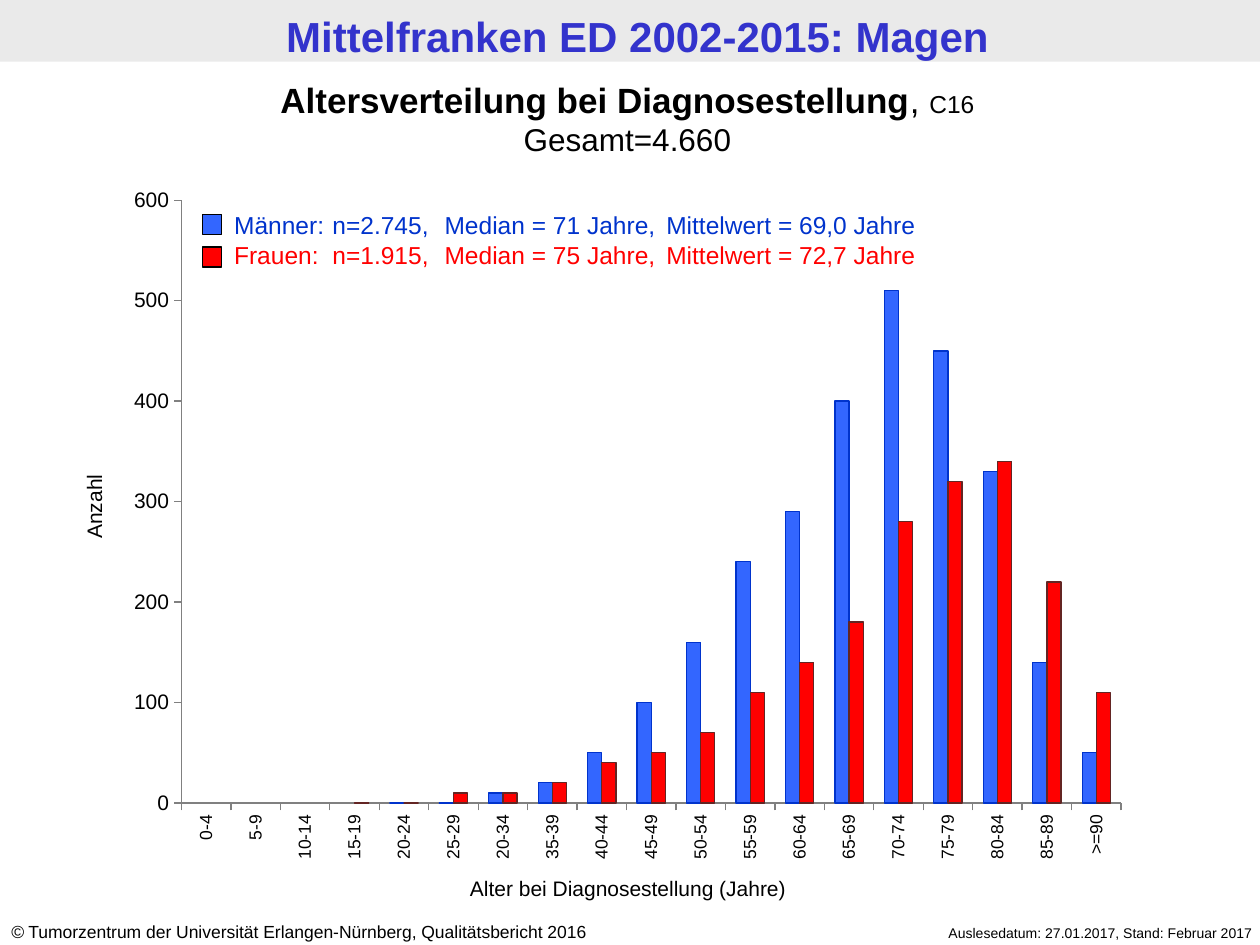
from pptx import Presentation
from pptx.chart.data import CategoryChartData as Data
from pptx.dml.color import RGBColor as RGB
from pptx.enum.chart import XL_CHART_TYPE as Kind, XL_TICK_MARK as Tick
from pptx.enum.shapes import MSO_SHAPE as Form
from pptx.enum.text import MSO_ANCHOR as Anchor, MSO_AUTO_SIZE as Fit, PP_ALIGN as Align
from pptx.oxml import parse_xml
from pptx.oxml.ns import nsdecls, qn
from pptx.util import Inches, Pt

COLORS = {
    "band": "EAEAEA", "title": "3333CC", "text": "000000", "axis": "808080",
    "men": "3366FF", "men_edge": "0033CC", "women": "FF0000",
    "women_edge": "632523", "plot": "FFFFFF",
}
AGES = ["0-4", "5-9", "10-14", "15-19", "20-24", "25-29", "20-34", "35-39",
        "40-44", "45-49", "50-54", "55-59", "60-64", "65-69", "70-74",
        "75-79", "80-84", "85-89", ">=90"]
MEN = [None] * 4 + [0, 0, 10, 20, 50, 100, 160, 240, 290, 400, 510, 450, 330, 140, 50]
WOMEN = [None] * 3 + [0, 0, 10, 10, 20, 40, 50, 70, 110, 140, 180, 280, 320, 340, 220, 110]
TABS = [0.78, 0.88, 1.67, 3.43]


def color(name):
    return RGB.from_string(COLORS[name])


def style(font, size, name="text", bold=False, italic=False, face="Arial"):
    font.name = face
    font.size = Pt(size)
    font.bold = bold
    font.italic = italic
    font.color.rgb = color(name)


def place(shape, box):
    shape.left, shape.top, shape.width, shape.height = map(Inches, box)


def add_tabs(para):
    stops = "".join(f'<a:tab pos="{Inches(pos)}" algn="l"/>' for pos in TABS)
    para._p.get_or_add_pPr().append(
        parse_xml(f'<a:tabLst {nsdecls("a")}>{stops}</a:tabLst>'))


def add_text(slide, box, lines, align=Align.LEFT, turn=0, tabs=False):
    shape = slide.shapes.add_textbox(*map(Inches, box))
    shape.rotation = turn
    frame = shape.text_frame
    frame.word_wrap = True
    for i, runs in enumerate(lines):
        para = frame.paragraphs[0] if i == 0 else frame.add_paragraph()
        para.alignment = align
        if tabs:
            add_tabs(para)
        for text, form in runs:
            run = para.add_run()
            run.text = text
            style(run.font, **form)


def add_rect(slide, box, fill, edge=None):
    shape = slide.shapes.add_shape(Form.RECTANGLE, *map(Inches, box))
    shape.shadow.inherit = False
    shape.fill.solid()
    shape.fill.fore_color.rgb = color(fill)
    if edge:
        shape.line.color.rgb = color(edge)
        shape.line.width = Pt(0.75)
    else:
        shape.line.fill.background()


def set_title(slide, text):
    title = slide.shapes.title
    place(title, (0.06, 0.01, 10, 0.49))
    frame = title.text_frame
    frame.auto_size = Fit.NONE
    frame.vertical_anchor = Anchor.BOTTOM
    frame.margin_top = Inches(0.04)
    frame.margin_bottom = Inches(0.02)
    frame.text = text
    para = frame.paragraphs[0]
    para.alignment = Align.CENTER
    style(para.runs[0].font, 24, "title", bold=True)


def set_axis(axis, size):
    axis.has_major_gridlines = False
    axis.major_tick_mark = Tick.OUTSIDE
    axis.minor_tick_mark = Tick.NONE
    axis.format.line.color.rgb = color("axis")
    axis.format.line.width = Pt(0.75)
    style(axis.tick_labels.font, size)


def set_plot(chart, x, y, w, h):
    area = chart._chartSpace.chart.plotArea
    for old in area.findall(qn("c:layout")):
        area.remove(old)
    spots = "".join(f'<c:{tag} val="{val}"/>' for tag, val in
                    (("layoutTarget", "inner"), ("xMode", "edge"), ("yMode", "edge"),
                     ("x", x), ("y", y), ("w", w), ("h", h)))
    area.insert(0, parse_xml(
        f'<c:layout {nsdecls("c")}><c:manualLayout>{spots}</c:manualLayout></c:layout>'))
    area.append(parse_xml(
        f'<c:spPr {nsdecls("c", "a")}><a:solidFill><a:srgbClr val="{COLORS["plot"]}"/>'
        '</a:solidFill><a:ln><a:noFill/></a:ln></c:spPr>'))


def add_chart(slide, box):
    data = Data()
    data.categories = AGES
    data.add_series("Männer", MEN)
    data.add_series("Frauen", WOMEN)
    chart = slide.shapes.add_chart(
        Kind.COLUMN_CLUSTERED, *map(Inches, box), data).chart
    chart.has_legend = False
    chart.has_title = False
    style(chart.font, 18, face="Calibri")
    set_axis(chart.category_axis, 10)
    set_axis(chart.value_axis, 12)
    chart.category_axis._element.find(qn("c:txPr")).find(
        qn("a:bodyPr")).set("rot", "-5400000")
    chart.value_axis.minimum_scale = 0
    chart.value_axis.maximum_scale = 600
    chart.value_axis.major_unit = 100
    plot = chart.plots[0]
    plot.gap_width = 150
    plot.overlap = 0
    plot.vary_by_categories = False
    for series, name in zip(plot.series, ("men", "women")):
        series.invert_if_negative = False
        series.format.fill.solid()
        series.format.fill.fore_color.rgb = color(name)
        series.format.line.color.rgb = color(name + "_edge")
        series.format.line.width = Pt(0.75)
    set_plot(chart, 0.065, 0.036, 0.914, 0.862)


def main():
    deck = Presentation()
    deck.slide_width, deck.slide_height = Inches(10), Inches(7.5)
    slide = deck.slides.add_slide(deck.slide_layouts[5])
    add_rect(slide, (0, 0, 10, 0.49), "band")
    band = slide.shapes[-1]._element
    slide.shapes.title._element.addprevious(band)
    set_title(slide, "Mittelfranken ED 2002-2015: Magen")

    add_text(slide, (6.65, 7.29, 3.39, 0.24),
             [[("Auslesedatum: 27.01.2017, Stand: Februar 2017", {"size": 8})]],
             align=Align.RIGHT)
    add_text(slide, (-0.01, 7.26, 5.24, 0.27),
             [[("©", {"size": 10, "italic": True}),
               (" Tumorzentrum der Universität Erlangen-Nürnberg, Qualitätsbericht 2016",
                {"size": 10})]])
    add_chart(slide, (0.91, 1.39, 8.16, 5.55))
    add_text(slide, (-0.04, 0.57, 10.04, 0.74),
             [[("Altersverteilung bei Diagnosestellung", {"size": 20, "bold": True}),
               (", ", {"size": 20}), ("C16", {"size": 14})],
              [("Gesamt=4.660", {"size": 18})]], align=Align.CENTER)
    add_text(slide, (1.76, 1.62, 6.85, 0.57),
             [[("Männer: \tn=2.745, \tMedian = 71 Jahre, \tMittelwert = 69,0 Jahre",
                {"size": 14, "name": "men_edge"})],
              [("Frauen: \tn=1.915, \tMedian = 75 Jahre,\tMittelwert = 72,7 Jahre",
                {"size": 14, "name": "women"})]], tabs=True)
    for top, name in ((1.7, "men"), (1.96, "women")):
        add_rect(slide, (1.61, top, 0.15, 0.16), name, edge="text")
    for text, box, turn in (
            ("Alter bei Diagnosestellung (Jahre)", (3.45, 6.9, 3.07, 0.3), 0),
            ("Anzahl", (-0.56, 3.87, 2.61, 0.3), 270)):
        add_text(slide, box, [[(text, {"size": 12})]], align=Align.CENTER, turn=turn)
    deck.save("out.pptx")


if __name__ == "__main__":
    main()
